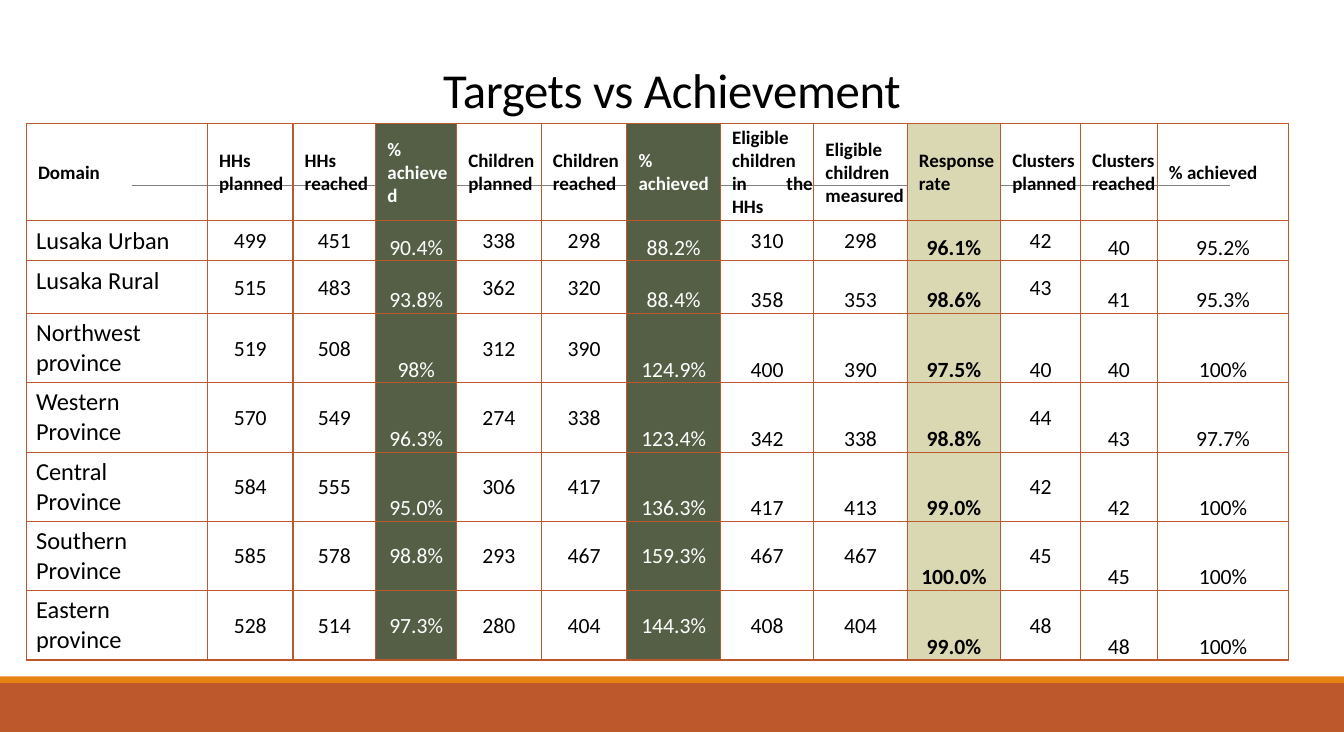
from dataclasses import dataclass

from lxml.etree import SubElement
from pptx import Presentation
from pptx.dml.color import RGBColor
from pptx.enum.shapes import MSO_CONNECTOR as Connector, MSO_SHAPE as Shape
from pptx.enum.text import MSO_ANCHOR as Anchor, PP_ALIGN as Align
from pptx.oxml.ns import qn
from pptx.util import Emu, Inches, Pt

BLACK, WHITE, GREY = "000000", "FFFFFF", "808080"
RUST, ORANGE = "BD582C", "E48312"
OLIVE, SAND = "545F46", "DAD7B3"
PLAIN_TABLE = "{2D5ABB26-0587-4C30-8999-92F81FD0307C}"
ANCHORS = {"t": Anchor.TOP, "m": Anchor.MIDDLE, "b": Anchor.BOTTOM}

# 35 cm wide, as presentation programs store it
presentation = Presentation()
presentation.slide_width, presentation.slide_height = Emu(12_599_988), Inches(7.5)
slide = presentation.slides.add_slide(presentation.slide_layouts[6])


@dataclass
class Area:
    """Position and size in percent of the slide."""
    left: float
    top: float
    width: float
    height: float

    def emu(self) -> tuple[Emu, ...]:
        sides = (presentation.slide_width, presentation.slide_height) * 2
        shares = (self.left, self.top, self.width, self.height)
        return tuple(Emu(round(side * share / 100)) for side, share in zip(sides, shares))


@dataclass
class Column:
    """A table column: relative width and one anchor letter per province."""
    heading: str
    width: int
    anchors: str
    fill: str | None = None
    color: str = BLACK
    bold: bool = False


@dataclass
class Bar:
    area: Area
    color: str


def rgb(value: str) -> RGBColor:
    return RGBColor.from_string(value)


def write(frame, text: str, *, size: float, color: str = BLACK, bold: bool = False,
          align=Align.LEFT, leading: float | None = None, tracking: float = 0) -> None:
    paragraph = frame.paragraphs[0]
    paragraph.alignment = align
    if leading:
        paragraph.line_spacing = Pt(leading)
    run = paragraph.add_run()
    run.text = text
    run.font.name, run.font.size, run.font.bold = "Calibri", Pt(size), bold
    run.font.color.rgb = rgb(color)
    if tracking:
        run.font._element.set("spc", str(round(tracking * 100)))


def draw_bar(bar: Bar) -> None:
    shape = slide.shapes.add_shape(Shape.RECTANGLE, *bar.area.emu())
    shape.shadow.inherit = False
    shape.fill.solid()
    shape.fill.fore_color.rgb = rgb(bar.color)
    shape.line.fill.background()


def draw_rule(area: Area, color: str, weight: float) -> None:
    left, top, width, height = area.emu()
    rule = slide.shapes.add_connector(Connector.STRAIGHT, left, top, left + width, top + height)
    rule.line.color.rgb = rgb(color)
    rule.line.width = Pt(weight)
    SubElement(rule._element.spPr, qn("a:effectLst"))


def style_cell(cell, fill: str | None, anchor: str, margins: tuple[float, ...]) -> None:
    properties = cell._tc.get_or_add_tcPr()
    for side in ("lnL", "lnR", "lnT", "lnB"):
        border = SubElement(properties, qn(f"a:{side}"), w=str(int(Pt(1))))
        SubElement(SubElement(border, qn("a:solidFill")), qn("a:srgbClr"), val=RUST)
    if fill:
        cell.fill.solid()
        cell.fill.fore_color.rgb = rgb(fill)
    else:
        cell.fill.background()
    cell.vertical_anchor = ANCHORS[anchor]
    (cell.margin_left, cell.margin_top,
     cell.margin_right, cell.margin_bottom) = map(Inches, margins)


def draw_table(area: Area, columns: list[Column], rows: list[list[str]],
               row_weights: list[int]) -> None:
    left, top, width, height = area.emu()
    table = slide.shapes.add_table(len(rows) + 1, len(columns), left, top, width, height).table
    table.first_row = table.horz_banding = False
    table._tbl.tblPr.find(qn("a:tableStyleId")).text = PLAIN_TABLE
    for row, weight in zip(table.rows, row_weights):
        row.height = Emu(round(height * weight / sum(row_weights)))
    total = sum(column.width for column in columns)
    for c, column in enumerate(columns):
        table.columns[c].width = Emu(round(width * column.width / total))
        heading = table.cell(0, c)
        style_cell(heading, column.fill, "m", (0.12, 0.01, 0.01, 0))
        write(heading.text_frame, column.heading, size=14, color=column.color,
              bold=True, align=Align.JUSTIFY)
        is_domain = c == 0
        margins = (0.1, 0.05, 0.1, 0.05) if is_domain else (0.01, 0.01, 0.01, 0)
        for r, values in enumerate(rows):
            cell = table.cell(r + 1, c)
            style_cell(cell, column.fill, column.anchors[r], margins)
            write(cell.text_frame, values[c], size=18 if is_domain else 16,
                  color=column.color, bold=column.bold,
                  align=Align.LEFT if is_domain else Align.CENTER)


# Footer bars and the rule behind the table
for footer_bar in (Bar(Area(0, 93.33, 100, 6.67), RUST), Bar(Area(0, 92.4, 100, 0.93), ORANGE)):
    draw_bar(footer_bar)
draw_rule(Area(9.8, 25.33, 81.71, 0), GREY, 0.5)

# Title
title = slide.shapes.add_textbox(*Area(5, 5.33, 90, 11.47).emu()).text_frame
title.word_wrap = True
title.vertical_anchor = Anchor.BOTTOM
write(title, "Targets vs Achievement", size=36, align=Align.CENTER, leading=44, tracking=-0.25)

# Achievement table
MIDDLE, BOTTOM = "m" * 7, "b" * 7
achievement_columns = [
    Column("Domain", 186, "t" * 7),
    Column("HHs planned", 88, MIDDLE),
    Column("HHs reached", 85, MIDDLE),
    Column("% achieved", 83, "bbbbbmm", OLIVE, WHITE),
    Column("Children planned", 87, MIDDLE),
    Column("Children reached", 88, MIDDLE),
    Column("% achieved", 96, "bbbbbmm", OLIVE, WHITE),
    Column("Eligible children in the HHs", 96, "mbbbbmm"),
    Column("Eligible children measured", 96, "mbbbbmm"),
    Column("Response rate", 96, BOTTOM, SAND, bold=True),
    Column("Clusters planned", 82, "mmbmmmm"),
    Column("Clusters reached", 79, BOTTOM),
    Column("% achieved", 135, BOTTOM),
]
results = {
    "Lusaka Urban": "499 451 90.4% 338 298 88.2% 310 298 96.1% 42 40 95.2%",
    "Lusaka Rural": "515 483 93.8% 362 320 88.4% 358 353 98.6% 43 41 95.3%",
    "Northwest province": "519 508 98% 312 390 124.9% 400 390 97.5% 40 40 100%",
    "Western Province": "570 549 96.3% 274 338 123.4% 342 338 98.8% 44 43 97.7%",
    "Central Province": "584 555 95.0% 306 417 136.3% 417 413 99.0% 42 42 100%",
    "Southern Province": "585 578 98.8% 293 467 159.3% 467 467 100.0% 45 45 100%",
    "Eastern province": "528 514 97.3% 280 404 144.3% 408 404 99.0% 48 48 100%",
}
draw_table(Area(1.96, 16.85, 93.95, 73.33), achievement_columns,
           [[domain, *figures.split()] for domain, figures in results.items()],
           [100, 41, 54] + [71] * 5)

presentation.save("out.pptx")
